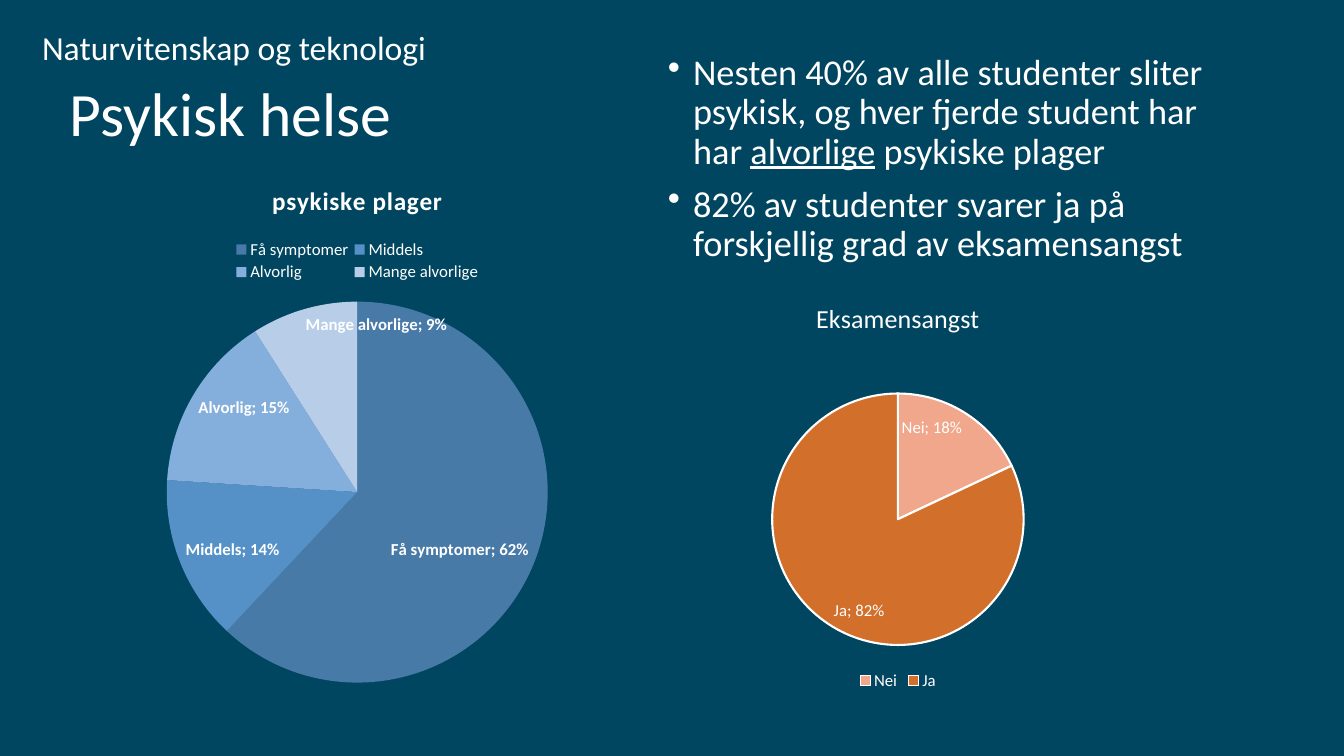
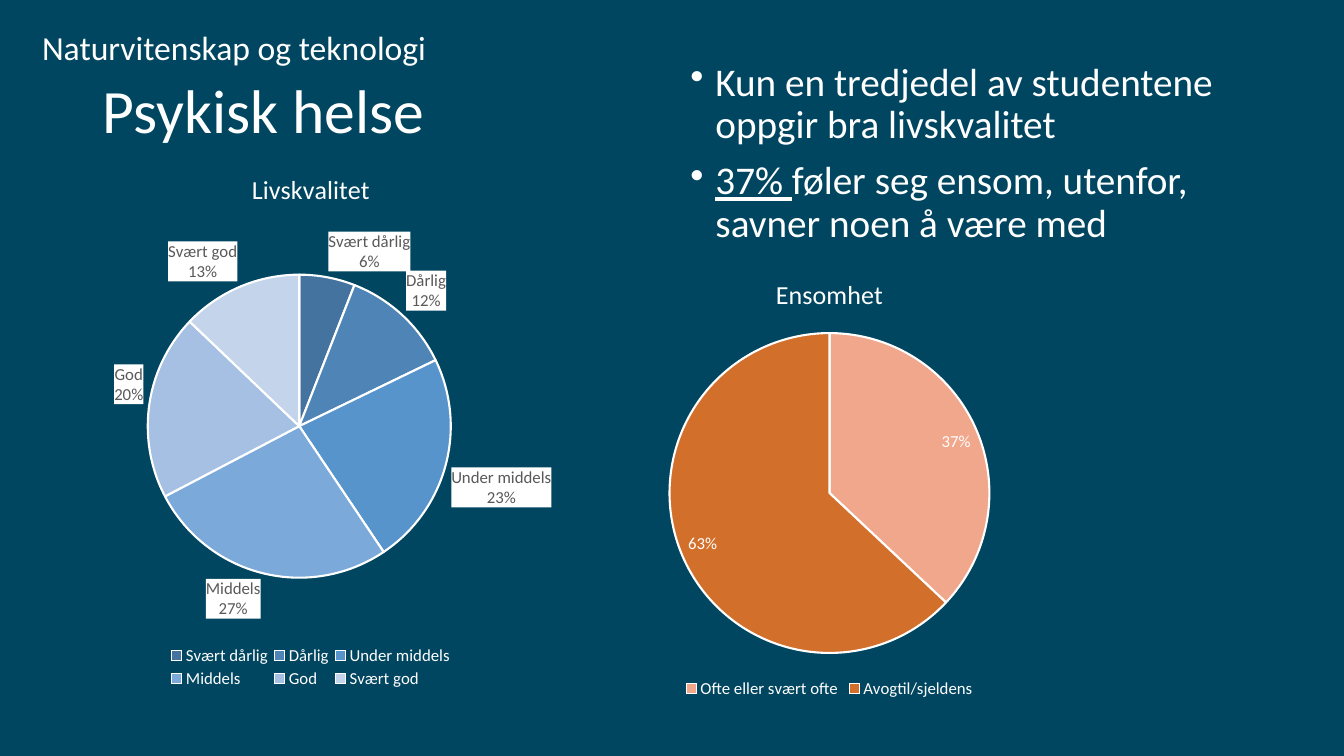
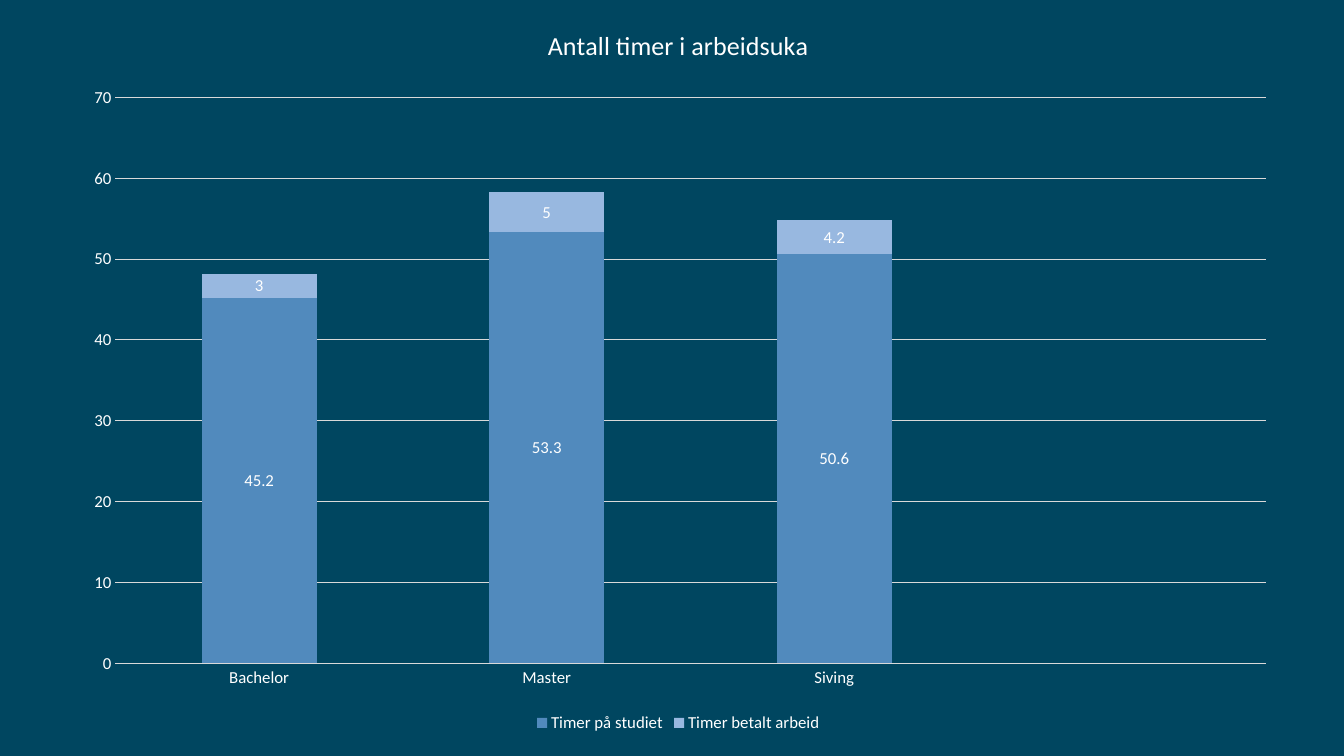
from dataclasses import dataclass

import pptx
import pptx.chart.data
import pptx.dml.color
import pptx.enum.chart
import pptx.enum.text
import pptx.oxml
import pptx.oxml.ns
import pptx.util
from lxml import etree

Pt = pptx.util.Pt
CHART_TYPE = pptx.enum.chart.XL_CHART_TYPE
LABEL = pptx.enum.chart.XL_LABEL_POSITION
LEGEND = pptx.enum.chart.XL_LEGEND_POSITION
qn = pptx.oxml.ns.qn


@dataclass(frozen=True)
class Theme:
    font: str = "Calibri"
    background: str = "004660"
    text: str = "FFFFFF"
    label_dark: str = "595959"
    grid: str = "D9D9D9"
    answers: tuple = ("F1A78B", "D26F2B")
    symptoms: tuple = ("487AA8", "5591C7", "84AEDC", "B8CDE8")
    quality: tuple = ("43739E", "4E85B6", "5794CB", "7AA9DA", "A5C0E3", "C4D5EB")
    hours: tuple = ("518ABD", "98B8E0")
    title_size: float = 44
    header_size: float = 24
    chart_title_size: float = 18.6
    chart_size: float = 12


THEME = Theme()


def rgb(value):
    return pptx.dml.color.RGBColor.from_string(value)


def style_font(font, size, color=THEME.text, bold=False):
    font.name, font.size, font.bold = THEME.font, Pt(size), bold
    font.color.rgb = rgb(color)


def add_slide(deck):
    slide = deck.slides.add_slide(deck.slide_layouts[6])
    slide.background.fill.solid()
    slide.background.fill.fore_color.rgb = rgb(THEME.background)
    return slide


def text_frame(slide, box, anchor):
    frame = slide.shapes.add_textbox(*map(Pt, box)).text_frame
    frame.word_wrap = True
    frame.vertical_anchor = anchor
    return frame


def add_heading(slide, left, top, text, size):
    frame = text_frame(slide, (left, top, 828, 104.4), pptx.enum.text.MSO_ANCHOR.MIDDLE)
    heading = frame.paragraphs[0]
    heading.text = text
    heading.line_spacing = 0.9
    style_font(heading.font, size)


def add_bullets(slide, box, size, bullets):
    """Each bullet is a list of (text, underlined) runs."""
    frame = text_frame(slide, box, pptx.enum.text.MSO_ANCHOR.TOP)
    for index, parts in enumerate(bullets):
        bullet = frame.add_paragraph() if index else frame.paragraphs[0]
        bullet.line_spacing, bullet.space_before = 0.9, Pt(10)
        style_font(bullet.font, size)
        for text, underlined in parts:
            run = bullet.add_run()
            run.text = text
            if underlined:
                run.font.underline = True
        properties = bullet._p.get_or_add_pPr()
        properties.set("marL", str(Pt(18)))
        properties.set("indent", str(-Pt(18)))
        mark = etree.Element(qn("a:buChar"), char="•")
        properties.find(qn("a:defRPr")).addprevious(mark)


def manual_layout(fractions, inner=False):
    """Layout element from left, top, width, height as shares of the chart."""
    layout = pptx.oxml.parse_xml(f"<c:layout {pptx.oxml.ns.nsdecls('c')}/>")
    manual = etree.SubElement(layout, qn("c:manualLayout"))
    settings = [("layoutTarget", "inner")] if inner else []
    settings += [("xMode", "edge"), ("yMode", "edge"), *zip("xywh", fractions)]
    for tag, value in settings:
        etree.SubElement(manual, qn(f"c:{tag}"), val=str(value))
    return layout


def add_chart(slide, kind, box, title, categories, series, plot_area,
              legend_at=LEGEND.BOTTOM, legend_area=None):
    data = pptx.chart.data.CategoryChartData()
    data.categories = categories
    for name, values in series:
        data.add_series(name, values)
    chart = slide.shapes.add_chart(kind, *map(Pt, box), data).chart
    style_font(chart.font, THEME.chart_size)

    chart.has_title = True
    heading = chart.chart_title.text_frame.paragraphs[0]
    heading.text = title
    style_font(heading.font, THEME.chart_title_size)
    chart.chart_title.include_in_layout = False

    chart.has_legend = True
    legend = chart.legend
    legend.position = legend_at
    legend.include_in_layout = False
    style_font(legend.font, THEME.chart_size)
    if legend_area:
        legend._element.find(qn("c:legendPos")).addnext(manual_layout(legend_area))

    area = chart._chartSpace.chart.plotArea
    for automatic in area.findall(qn("c:layout")):
        area.remove(automatic)
    area.insert(0, manual_layout(plot_area, inner=True))
    return chart


def add_pie(slide, box, title, shares, colors, plot_area, show=("value",),
            position=LABEL.INSIDE_END, separator="; ", label_color=THEME.text,
            label_fill=None, bold=False, outlined=True, **legend):
    chart = add_chart(slide, CHART_TYPE.PIE, box, title, list(shares),
                      [(title, list(shares.values()))], plot_area, **legend)
    chart.plots[0].vary_by_categories = True
    slices = chart.plots[0].series[0]
    for index, color in enumerate(colors):
        piece = slices.points[index].format
        piece.fill.solid()
        piece.fill.fore_color.rgb = rgb(color)
        if outlined:
            piece.line.color.rgb = rgb(THEME.text)
            piece.line.width = Pt(1.5)
        else:
            piece.line.fill.background()

    labels = slices.data_labels
    labels.show_value = "value" in show
    labels.show_percentage = "percent" in show
    labels.show_category_name = "category" in show
    labels.number_format, labels.number_format_is_linked = "0%", False
    labels.position = position
    style_font(labels.font, THEME.chart_size, label_color, bold)
    mark = etree.Element(qn("c:separator"))
    mark.text = separator
    labels._element.find(qn("c:showBubbleSize")).addnext(mark)
    if label_fill:
        backing = pptx.oxml.parse_xml(
            f'<c:spPr {pptx.oxml.ns.nsdecls("c", "a")}><a:solidFill>'
            f'<a:srgbClr val="{label_fill}"/></a:solidFill></c:spPr>')
        labels._element.find(qn("c:txPr")).addprevious(backing)
    return chart


def add_hours_chart(slide, box):
    chart = add_chart(
        slide, CHART_TYPE.COLUMN_STACKED, box, "Antall timer i arbeidsuka",
        ["Bachelor", "Master", "Siving", ""],
        [("Timer på studiet", (45.2, 53.3, 50.6, None)),
         ("Timer betalt arbeid", (3, 5, 4.2, None))],
        (0.04, 0.13, 0.94, 0.77))
    plot = chart.plots[0]
    plot.gap_width, plot.overlap = 150, 100
    for hours, color in zip(plot.series, THEME.hours):
        hours.format.fill.solid()
        hours.format.fill.fore_color.rgb = rgb(color)
        labels = hours.data_labels
        labels.show_value, labels.position = True, LABEL.CENTER
        style_font(labels.font, THEME.chart_size)

    programmes, scale = chart.category_axis, chart.value_axis
    for axis in (programmes, scale):
        axis.major_tick_mark = pptx.enum.chart.XL_TICK_MARK.NONE
        style_font(axis.tick_labels.font, THEME.chart_size)
    scale.minimum_scale, scale.maximum_scale, scale.major_unit = 0, 70, 10
    scale.format.line.fill.background()
    for line in (programmes.format.line, scale.major_gridlines.format.line):
        line.color.rgb = rgb(THEME.grid)
        line.width = Pt(0.75)


def add_health_slide(deck, title_left, title_top):
    slide = add_slide(deck)
    add_heading(slide, title_left, title_top, "Psykisk helse", THEME.title_size)
    add_heading(slide, 23, -16.6, "Naturvitenskap og teknologi", THEME.header_size)
    return slide


def add_distress_slide(deck):
    slide = add_health_slide(deck, 42.5, 31)
    add_bullets(slide, (470, 35.3, 408.2, 172), 25.9, [
        [("Nesten 40% av alle studenter sliter psykisk, og hver fjerde student har har ", False),
         ("alvorlige", True), (" psykiske plager", False)],
        [("82% av studenter svarer ja på forskjellig grad av eksamensangst", False)]])
    add_pie(slide, (519, 201.6, 244.8, 294.5), "Eksamensangst",
            {"Nei": 0.18, "Ja": 0.82}, THEME.answers, (0.13, 0.27, 0.74, 0.61),
            show=("value", "category"))
    distress = add_pie(
        slide, (66.2, 116, 378, 380), "psykiske plager",
        {"Få symptomer": 0.62, "Middels": 0.14, "Alvorlig": 0.15, "Mange alvorlige": 0.09},
        THEME.symptoms, (0.14, 0.26, 0.72, 0.72), show=("value", "category"),
        bold=True, outlined=False, legend_at=LEGEND.TOP,
        legend_area=(0.26, 0.14, 0.48, 0.09))
    heading = distress.chart_title.text_frame.paragraphs[0]
    style_font(heading.font, 18, bold=True)
    heading.runs[0]._r.get_or_add_rPr().set("spc", "50")


def add_quality_slide(deck):
    slide = add_health_slide(deck, 66.2, 28.8)
    add_bullets(slide, (486, 41, 408.2, 142.6), 28, [
        [("Kun en tredjedel av studentene oppgir bra livskvalitet", False)],
        [("37% ", True), ("føler seg ensom, utenfor, savner noen å være med", False)]])
    add_pie(slide, (13.7, 107.3, 416.9, 386.6), "Livskvalitet",
            {"Svært dårlig": 6, "Dårlig": 12, "Under middels": 23,
             "Middels": 27, "God": 20, "Svært god": 13},
            THEME.quality, (0.22, 0.23, 0.52, 0.56), show=("percent", "category"),
            position=LABEL.OUTSIDE_END, separator="\n", label_color=THEME.label_dark,
            label_fill=THEME.text, legend_area=(0.25, 0.91, 0.5, 0.09))
    add_pie(slide, (414, 183.6, 357, 318.2), "Ensomhet",
            {"Ofte eller svært ofte": 0.37, "Avogtil/sjeldens": 0.63},
            THEME.answers, (0.18, 0.17, 0.64, 0.72))


def main():
    deck = pptx.Presentation()
    deck.slide_width, deck.slide_height = Pt(960), Pt(540)
    add_distress_slide(deck)
    add_quality_slide(deck)
    add_hours_chart(add_slide(deck), (47.5, 1.4, 874, 525))
    deck.save("out.pptx")


if __name__ == "__main__":
    main()
